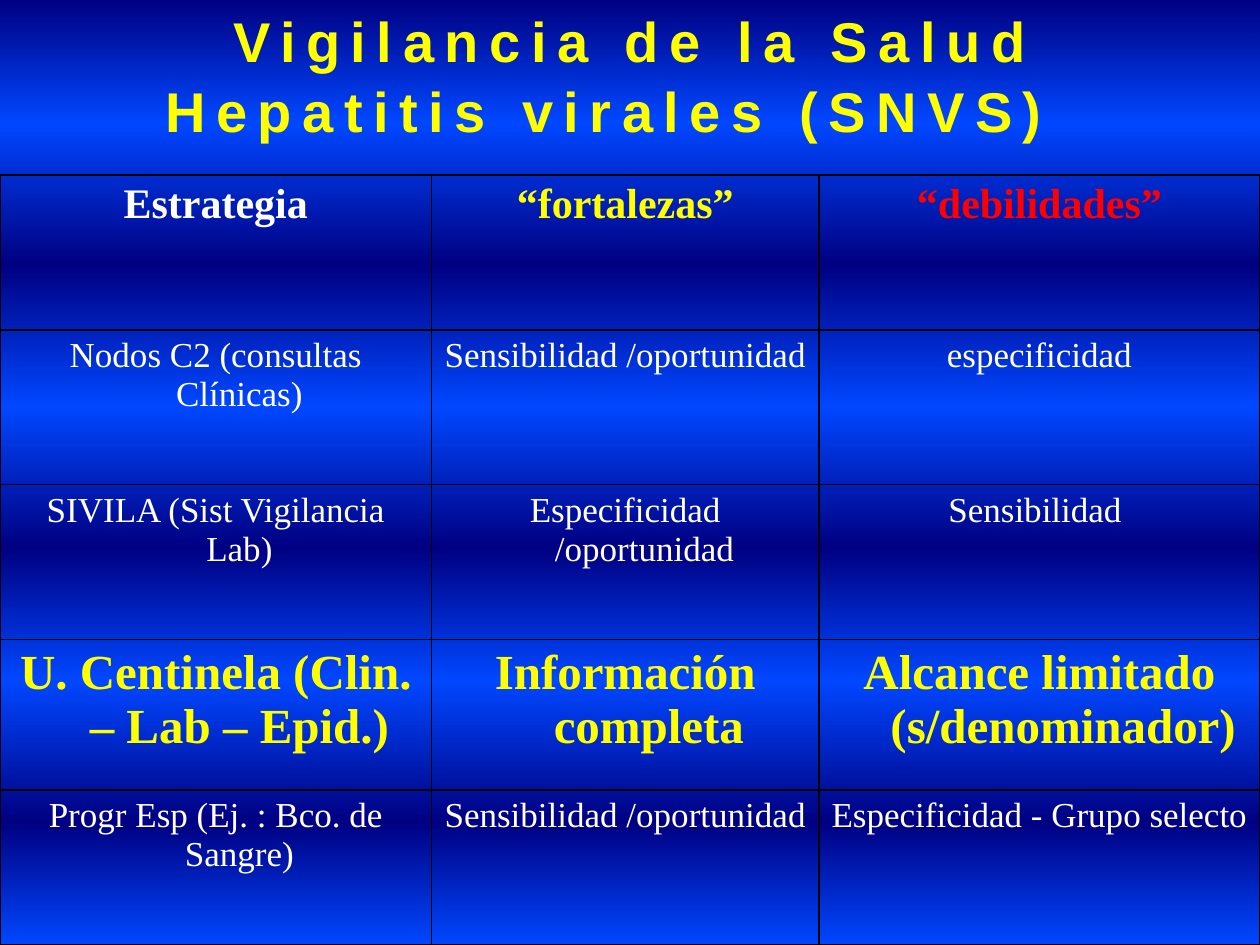
from dataclasses import dataclass

from lxml.etree import SubElement
from pptx import Presentation
from pptx.dml.color import RGBColor
from pptx.enum.text import PP_ALIGN
from pptx.oxml import parse_xml
from pptx.oxml.ns import qn
from pptx.util import Pt


@dataclass(frozen=True)
class Theme:
    navy: str = "000082"
    blue: str = "0047FF"
    white: str = "FFFFFF"
    yellow: str = "FFFF00"
    red: str = "FF0000"
    black: str = "000000"
    title_font: str = "Arial"
    table_font: str = "Times New Roman"
    title_size: int = 32
    header_size: int = 24
    body_size: int = 20
    highlight_size: int = 28


theme = Theme()


def add_centred_run(paragraph, text, font_name, size, color, bold):
    paragraph.alignment = PP_ALIGN.CENTER
    run = paragraph.add_run()
    run.text = text
    run.font.name = font_name
    run.font.size = Pt(size)
    run.font.bold = bold
    run.font.color.rgb = RGBColor.from_string(color)
    return run


def add_line(parent, tag, width, color):
    """Put a solid line element first in a text-run or cell property element."""
    line = SubElement(parent, qn(tag), w=str(Pt(width)))
    fill = SubElement(line, qn("a:solidFill"))
    SubElement(fill, qn("a:srgbClr"), val=color)
    return line


presentation = Presentation()
presentation.slide_width = Pt(720)
presentation.slide_height = Pt(540)
slide = presentation.slides.add_slide(presentation.slide_layouts[6])

# Background: alternating navy and blue bands, top to bottom
slide.background.fill.gradient()
gradient = slide.background._cSld.find(".//" + qn("a:gradFill"))
bands = "".join(
    f'<a:gs pos="{percent * 1000}"><a:srgbClr val="{(theme.navy, theme.blue)[i % 2]}"/></a:gs>'
    for i, percent in enumerate((0, 13, 28, 43, 58, 72, 87, 100))
)
gradient.getparent().replace(gradient, parse_xml(
    '<a:gradFill xmlns:a="http://schemas.openxmlformats.org/drawingml/2006/main" rotWithShape="0">'
    f'<a:gsLst>{bands}</a:gsLst><a:lin ang="5400000" scaled="0"/></a:gradFill>'
))

# Strategy table
BOLD, REGULAR = True, False
body = (theme.body_size, theme.white, REGULAR)
highlight = (theme.highlight_size, theme.yellow, BOLD)
strategies = [
    (body, ("Nodos C2 (consultas Clínicas)", "Sensibilidad /oportunidad", "especificidad")),
    (body, ("SIVILA (Sist Vigilancia Lab)", "Especificidad /oportunidad ", "Sensibilidad ")),
    (highlight, ("U. Centinela (Clin. – Lab – Epid.)", "Información completa",
                 "Alcance limitado (s/denominador)")),
    (body, ("Progr Esp (Ej. : Bco. de Sangre)", "Sensibilidad /oportunidad",
            "Especificidad - Grupo selecto")),
]
headings = [("Estrategia", theme.white), ("“fortalezas”", theme.yellow), ("“debilidades”", theme.red)]
rows = [[(text, theme.header_size, color, BOLD) for text, color in headings]]
rows += [[(text, *style) for text in texts] for style, texts in strategies]

table = slide.shapes.add_table(5, 3, Pt(0), Pt(100), Pt(720), Pt(440)).table
table.first_row = False
table.horz_banding = False
for column, width in zip(table.columns, (246.6, 221.4, 252)):
    column.width = Pt(width)
for row, height in zip(table.rows, (88.5, 88.5, 88.5, 86, 88.5)):
    row.height = Pt(height)

for row, contents in zip(table.rows, rows):
    for cell, (text, size, color, bold) in zip(row.cells, contents):
        paragraph = cell.text_frame.paragraphs[0]
        add_centred_run(paragraph, text, theme.table_font, size, color, bold)
        hanging = paragraph._p.get_or_add_pPr()
        hanging.set("marL", str(Pt(27)))
        hanging.set("indent", str(Pt(-27)))
        properties = cell._tc.get_or_add_tcPr()
        for side in ("a:lnL", "a:lnR", "a:lnT", "a:lnB"):
            add_line(properties, side, 1, theme.black)
        cell.fill.background()

# Title
title = slide.shapes.add_textbox(Pt(0), Pt(0), Pt(720), Pt(85)).text_frame
title.word_wrap = True
title_lines = ("Vigilancia de la Salud", "Hepatitis virales (SNVS)  ")
for i, text in enumerate(title_lines):
    paragraph = title.add_paragraph() if i else title.paragraphs[0]
    paragraph.space_before = Pt(2)
    run = add_centred_run(paragraph, text, theme.title_font, theme.title_size, theme.yellow, BOLD)
    properties = run.font._element
    properties.set("spc", "600")
    properties.insert(0, add_line(properties, "a:ln", 0.9, theme.red))

presentation.save("out.pptx")
